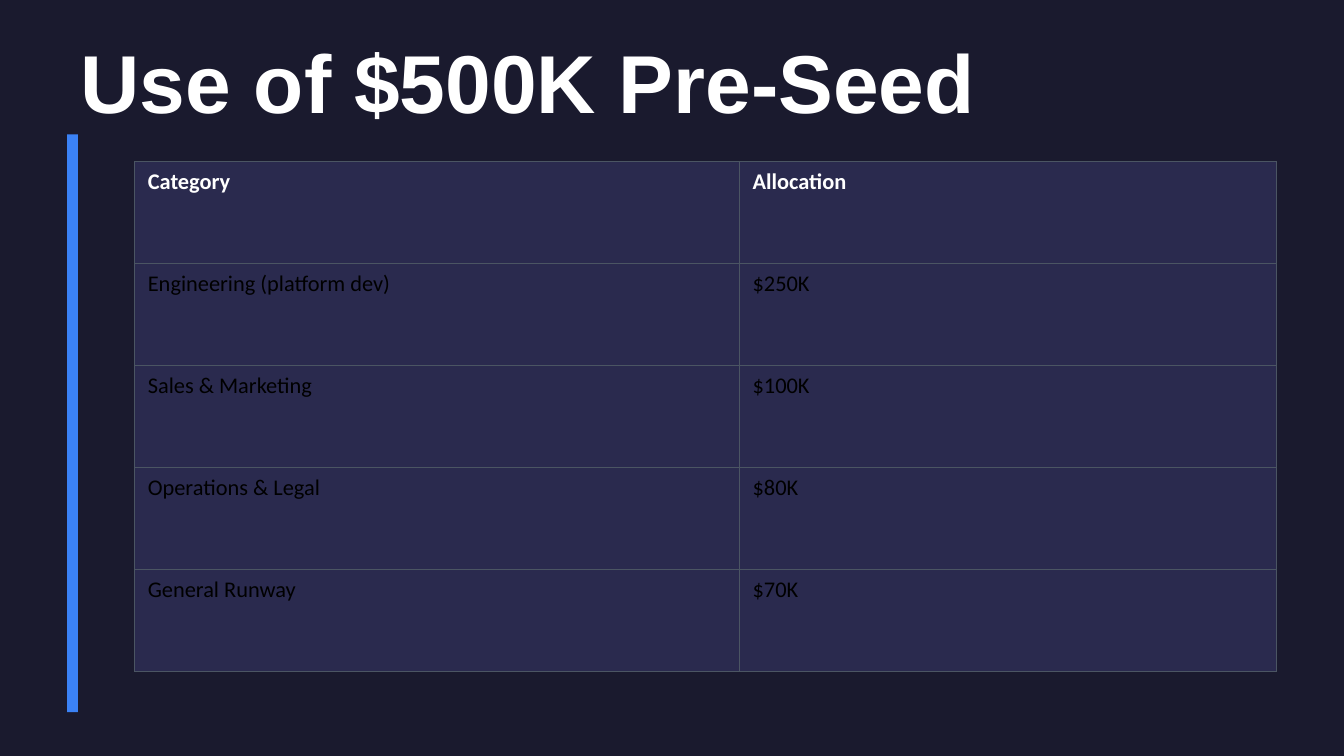
import pptx
import pptx.dml.color
import pptx.enum.shapes
import pptx.enum.text
import pptx.oxml
import pptx.oxml.ns
import pptx.util

COLORS = {
    "background": "1A1A2E",
    "accent": "3B82F6",
    "cell": "2A2A4E",
    "border": "4B5563",
    "light": "FFFFFF",
    "dark": "000000",
}
COL, ROW = pptx.util.Inches(0.5), pptx.util.Inches(0.1)
BORDER_WIDTH = pptx.util.Pt(0.5)

ALLOCATIONS = [
    ("Category", "Allocation"),
    ("Engineering (platform dev)", "$250K"),
    ("Sales & Marketing", "$100K"),
    ("Operations & Legal", "$80K"),
    ("General Runway", "$70K"),
]


def grid_box(col, row, cols, rows):
    """Turn grid columns and rows into left, top, width and height."""
    return int(col * COL), int(row * ROW), int(cols * COL), int(rows * ROW)


def set_fill(fill, color):
    fill.solid()
    fill.fore_color.rgb = pptx.dml.color.RGBColor.from_string(COLORS[color])


def write_text(tf, text, font="Calibri", size=12, color="dark", bold=False):
    p = tf.paragraphs[0]
    p.alignment = pptx.enum.text.PP_ALIGN.LEFT
    r = p.add_run()
    r.text = text
    r.font.name = font
    r.font.size = pptx.util.Pt(size)
    r.font.bold = bold
    r.font.color.rgb = pptx.dml.color.RGBColor.from_string(COLORS[color])


def set_borders(cell):
    tc_pr = cell._tc.get_or_add_tcPr()
    for i, side in enumerate(("lnL", "lnR", "lnT", "lnB")):
        line = pptx.oxml.parse_xml(
            f'<a:{side} {pptx.oxml.ns.nsdecls("a")} w="{BORDER_WIDTH}">'
            f'<a:solidFill><a:srgbClr val="{COLORS["border"]}"/></a:solidFill>'
            f"</a:{side}>"
        )
        tc_pr.insert(i, line)


def place_title(s, box, text):
    sp = s.shapes.title
    sp.left, sp.top, sp.width, sp.height = box
    tf = sp.text_frame
    tf.word_wrap = True
    tf.auto_size = pptx.enum.text.MSO_AUTO_SIZE.NONE
    tf.vertical_anchor = pptx.enum.text.MSO_ANCHOR.MIDDLE
    write_text(tf, text, font="Arial", size=44, color="light", bold=True)


def add_accent_bar(s, box):
    sp = s.shapes.add_shape(pptx.enum.shapes.MSO_SHAPE.RECTANGLE, *box)
    sp.shadow.inherit = False
    set_fill(sp.fill, "accent")
    sp.line.fill.background()


def add_allocation_table(s, box, rows, shares):
    """Fill the box with equal rows, and columns whose widths follow shares."""
    left, top, width, height = box
    table = s.shapes.add_table(len(rows), len(shares), *box).table
    for column, share in zip(table.columns, shares):
        column.width = width * share // sum(shares)
    for i, values in enumerate(rows):
        table.rows[i].height = height // len(rows)
        header = i == 0
        for j, value in enumerate(values):
            cell = table.cell(i, j)
            set_fill(cell.fill, "cell")
            set_borders(cell)
            write_text(cell.text_frame, value, bold=header,
                       color="light" if header else "dark")


def build_funding_slide(prs):
    s = prs.slides.add_slide(prs.slide_layouts.get_by_name("Title Only"))
    set_fill(s.background.fill, "background")
    place_title(s, grid_box(1, 3, 18, 6), "Use of $500K Pre-Seed")
    add_accent_bar(s, grid_box(1, 10, 0.16, 43))
    add_allocation_table(s, grid_box(2, 12, 17, 38), ALLOCATIONS, (9, 8))


def main():
    prs = pptx.Presentation()
    prs.slide_width = pptx.util.Inches(10)
    prs.slide_height = prs.slide_width * 9 // 16
    build_funding_slide(prs)
    prs.save("out.pptx")


if __name__ == "__main__":
    main()
